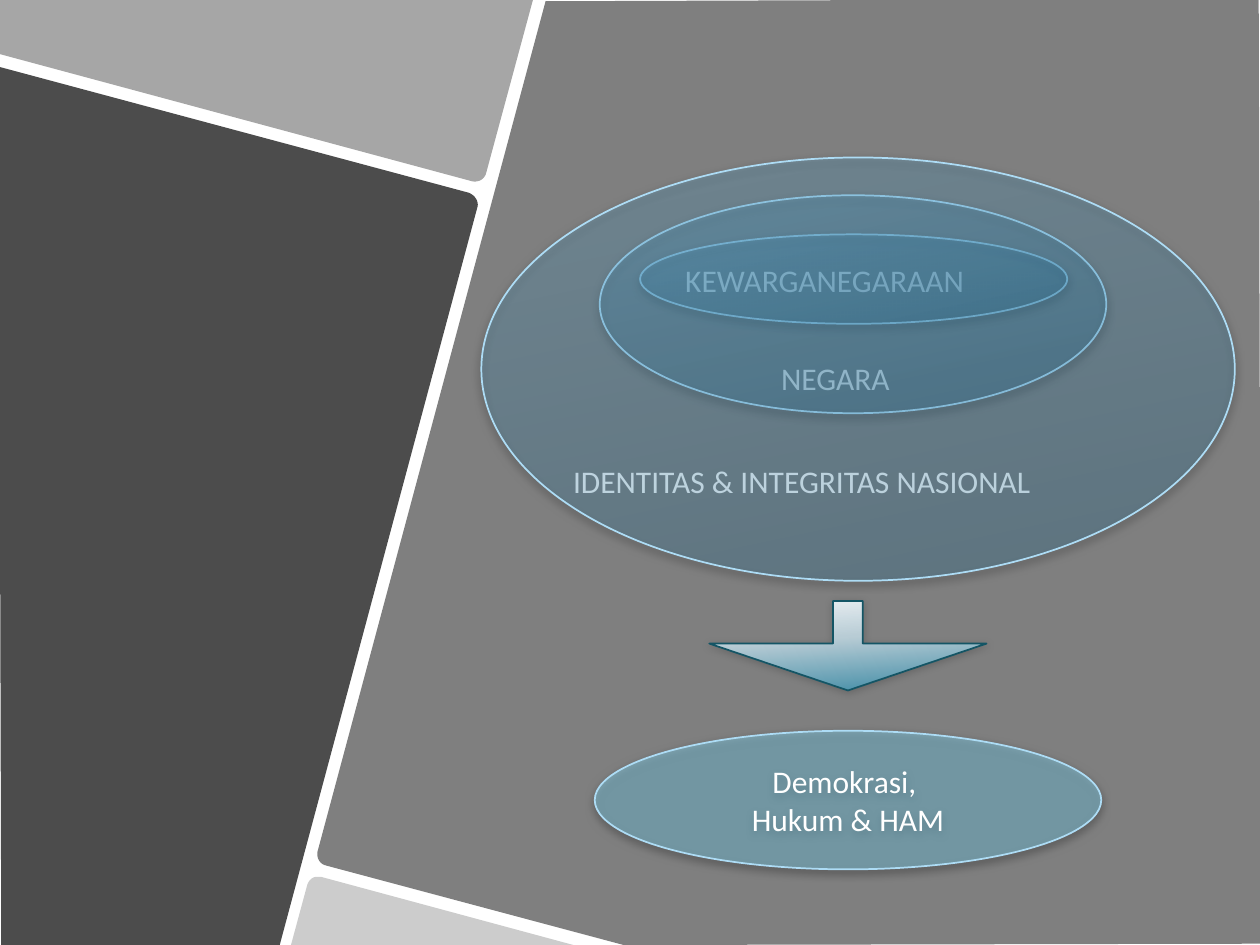
import pptx
import pptx.util
import pptx.dml.color
import pptx.enum.shapes
import pptx.enum.text
import pptx.oxml.ns
from lxml import etree

Inches = pptx.util.Inches
KIND = pptx.enum.shapes.MSO_SHAPE
ALIGN = pptx.enum.text.PP_ALIGN
RIM = "ADDCF5"
GLASS = [(0, "6AC9FB", 21), (100, "167BB0", 21)]
STEEL = [(0, "EDF2F5", 100), (42, "B8CCD5", 100), (100, "3E8BA5", 100)]

# Background panels: opacity and outline; six numbers make a curve
PANELS = [
    (70, [(-0.01, 0.53), (3.72, 1.53), (3.77, 1.55, 3.8, 1.6, 3.79, 1.64),
          (2.22, 7.5), (0.01, 7.5)]),
    (35, [(0, 0), (4.23, 0), (3.86, 1.37),
          (3.85, 1.42, 3.8, 1.45, 3.75, 1.44), (0, 0.43)]),
    (20, [(2.51, 6.96), (2.52, 6.96, 2.53, 6.96, 2.55, 6.96), (4.55, 7.5),
          (2.31, 7.5), (2.44, 7.02), (2.45, 6.99, 2.48, 6.96, 2.51, 6.96)]),
    (50, [(4.33, 0.01), (9.99, -0.01), (10.01, 7.49), (4.95, 7.5),
          (2.59, 6.87), (2.54, 6.86, 2.51, 6.81, 2.52, 6.76)]),
]


def rgb(code):
    return pptx.dml.color.RGBColor.from_string(code)


def node(parent, tag, **attrs):
    item = etree.SubElement(parent, pptx.oxml.ns.qn("a:" + tag))
    for key, value in attrs.items():
        item.set(key, str(value))
    return item


def tint(parent, code, alpha):
    item = node(parent, "srgbClr", val=code)
    if alpha < 100:
        node(item, "alpha", val=alpha * 1000)


def solid(shape, code, alpha):
    tint(node(shape.element.spPr, "solidFill"), code, alpha)


def blend(shape, stops, angle):
    grad = node(shape.element.spPr, "gradFill", rotWithShape=1)
    group = node(grad, "gsLst")
    for place, code, alpha in stops:
        tint(node(group, "gs", pos=place * 1000), code, alpha)
    node(grad, "lin", ang=angle * 60000, scaled=0)


def finish(shape, line, alpha, gap):
    """Add the outline and the soft shadow below."""
    shape.line.color.rgb = rgb(line)
    shape.line.width = pptx.util.Pt(1)
    effects = node(shape.element.spPr, "effectLst")
    shade = node(effects, "outerShdw", blurRad=pptx.util.Pt(5),
                 dist=pptx.util.Pt(gap), dir=90 * 60000, rotWithShape=0)
    tint(shade, "000000", alpha)


def curve(start, bend):
    """Points along a cubic curve."""
    x1, y1, x2, y2, x3, y3 = bend
    for step in range(1, 9):
        t = step / 8
        u = 1 - t
        parts = (u ** 3, 3 * u * u * t, 3 * u * t * t, t ** 3)
        yield tuple(sum(k * v for k, v in zip(parts, axis))
                    for axis in ((start[0], x1, x2, x3), (start[1], y1, y2, y3)))


def panel(slide, alpha, outline):
    points = []
    for item in outline:
        points.extend(curve(points[-1], item) if len(item) == 6 else [item])
    spots = [(Inches(x), Inches(y)) for x, y in points]
    pen = slide.shapes.build_freeform(*spots[0])
    pen.add_line_segments(spots[1:], close=True)
    shape = pen.convert_to_shape()
    solid(shape, "000000", alpha)
    shape.line.fill.background()
    shape.shadow.inherit = False


def form(slide, kind, box):
    return slide.shapes.add_shape(kind, *map(Inches, box))


def write(frame, lines, align):
    frame.word_wrap = True
    for index, text in enumerate(lines):
        para = frame.add_paragraph() if index else frame.paragraphs[0]
        para.alignment = align
        run = para.add_run()
        run.text = text
        run.font.name = "Calibri"
        run.font.size = pptx.util.Pt(18)
        run.font.color.rgb = rgb("FFFFFF")


def label(slide, text, left, top, width):
    box = slide.shapes.add_textbox(*map(Inches, (left, top, width, 0.4)))
    box.text_frame.auto_size = pptx.enum.text.MSO_AUTO_SIZE.SHAPE_TO_FIT_TEXT
    write(box.text_frame, [text], ALIGN.LEFT)


def main():
    deck = pptx.Presentation()
    deck.slide_width, deck.slide_height = Inches(10), Inches(7.5)
    slide = deck.slides.add_slide(deck.slide_layouts[6])

    for alpha, outline in PANELS:
        panel(slide, alpha, outline)

    # Labels lie under the tinted ellipses
    label(slide, "KEWARGANEGARAAN", 5.34, 2.02, 2.97)
    label(slide, "NEGARA", 6.1, 2.8, 1.28)
    label(slide, "IDENTITAS & INTEGRITAS NASIONAL", 4.45, 3.62, 4.77)

    # Nested ellipses, inner to outer
    for box in ((5.08, 1.86, 3.39, 0.71), (4.76, 1.55, 4.02, 1.73),
                (3.82, 1.25, 5.98, 3.36)):
        ring = form(slide, KIND.OVAL, box)
        blend(ring, GLASS, 78)
        finish(ring, RIM, 50, 2)

    # Arrow to the result
    arrow = form(slide, KIND.DOWN_ARROW, (5.63, 4.77, 2.2, 0.71))
    arrow.adjustments[0] = 0.108
    arrow.adjustments[1] = 0.524
    blend(arrow, STEEL, 86)
    finish(arrow, "145565", 20, 1)

    # Result
    goal = form(slide, KIND.OVAL, (4.72, 5.8, 4.02, 1.1))
    solid(goal, "86DCF9", 42)
    finish(goal, RIM, 50, 2)
    goal.text_frame.vertical_anchor = pptx.enum.text.MSO_ANCHOR.MIDDLE
    write(goal.text_frame, ["Demokrasi, ", "Hukum & HAM"], ALIGN.CENTER)

    deck.save("out.pptx")


if __name__ == "__main__":
    main()
